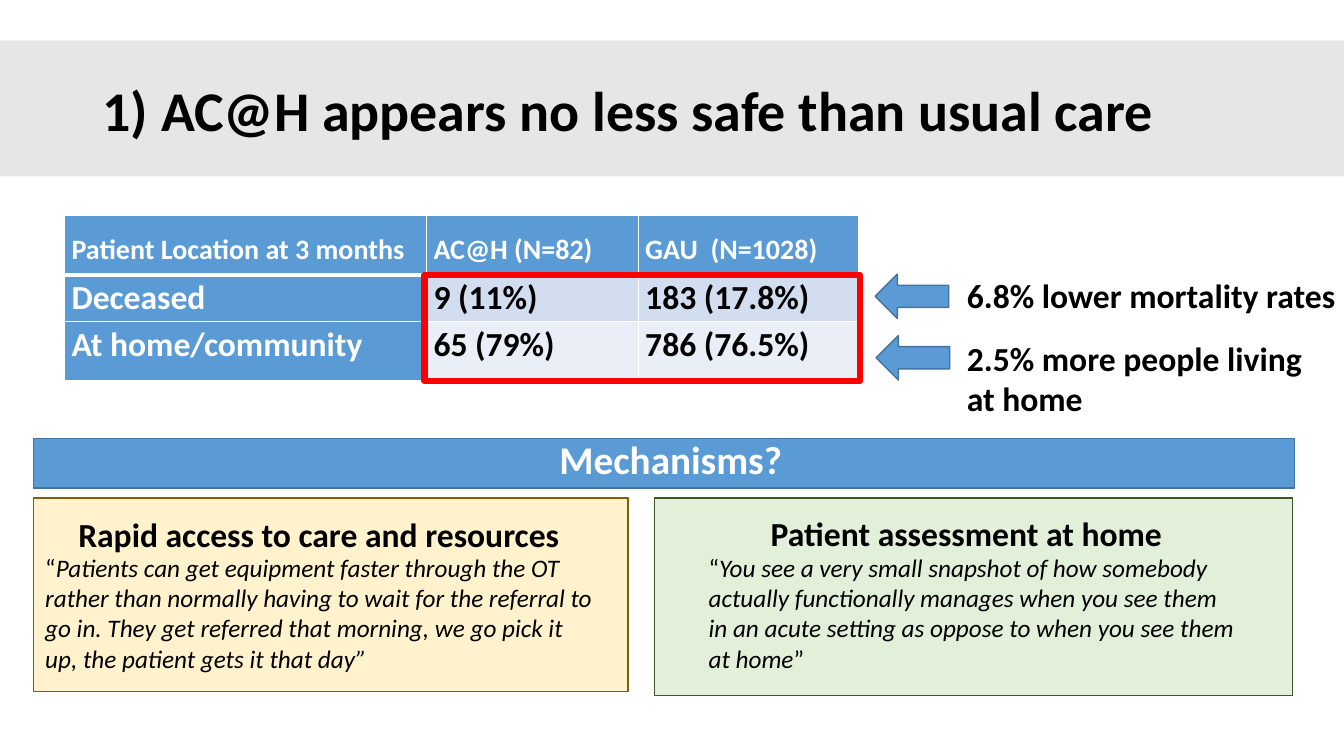
"""Build the slide on the safety of acute care at home compared with usual care."""
from dataclasses import dataclass
from typing import Optional

from lxml import etree
from pptx import Presentation
from pptx.dml.color import RGBColor
from pptx.enum.shapes import MSO_SHAPE
from pptx.enum.text import MSO_ANCHOR, PP_ALIGN
from pptx.oxml.ns import qn
from pptx.util import Inches, Pt

RECTANGLE = MSO_SHAPE.RECTANGLE
LEFT_ARROW = MSO_SHAPE.LEFT_ARROW
LEFT, CENTER, JUSTIFY = PP_ALIGN.LEFT, PP_ALIGN.CENTER, PP_ALIGN.JUSTIFY
TOP, MIDDLE = MSO_ANCHOR.TOP, MSO_ANCHOR.MIDDLE

FONT = "Calibri"
COLORS = {
    "black": "000000", "white": "FFFFFF", "band": "E7E6E6",
    "blue": "5B9BD5", "blue_edge": "43739E", "red": "FF0000",
    "row_dark": "D2DEEF", "row_light": "EAEFF7",
    "yellow": "FFF2CC", "yellow_edge": "806000",
    "green": "E2F0D9", "green_edge": "385723",
}


@dataclass(frozen=True)
class Box:
    left: float
    top: float
    width: float
    height: float

    def lengths(self) -> tuple:
        return tuple(Inches(v) for v in (self.left, self.top, self.width, self.height))


@dataclass(frozen=True)
class Panel:
    box: Box
    fill: Optional[str] = None
    edge: Optional[str] = None
    edge_width: float = 1
    preset: int = RECTANGLE


@dataclass(frozen=True)
class Span:
    text: str
    italic: bool = False


@dataclass(frozen=True)
class Label:
    box: Box
    spans: tuple
    size: float = 24
    bold: bool = True
    color: str = "black"
    align: int = LEFT
    spacing: float = 1
    anchor: int = TOP


BACK_PANELS = (
    Panel(Box(0.33, 4.94, 5.9, 1.92), "yellow", "yellow_edge"),
    Panel(Box(6.49, 4.94, 6.33, 1.96), "green", "green_edge"),
    Panel(Box(0, 0.4, 13.33, 1.35), "band"),
)
FRONT_PANELS = (
    Panel(Box(8.68, 2.72, 0.73, 0.44), "blue", "blue_edge", preset=LEFT_ARROW),
    Panel(Box(8.69, 3.33, 0.73, 0.44), "blue", "blue_edge", preset=LEFT_ARROW),
    Panel(Box(0.33, 4.35, 12.51, 0.49), "blue", "blue_edge"),
    Panel(Box(4.21, 2.73, 4.32, 1.05), edge="red", edge_width=4.5),
)
LABELS = (
    Label(Box(0.92, 0.4, 11.5, 1.45),
          (Span("1) AC@H appears no less safe than usual care"),),
          size=40, spacing=0.9, anchor=MIDDLE),
    Label(Box(0.61, 4.85, 5.18, 0.71),
          (Span("Rapid access to care and resources "),), align=CENTER, spacing=1.5),
    Label(Box(7.35, 4.84, 4.47, 0.71),
          (Span("Patient assessment at home"),), align=CENTER, spacing=1.5),
    Label(Box(9.49, 2.68, 3.92, 0.5), (Span("6.8% lower mortality rates"),)),
    Label(Box(9.49, 3.3, 3.58, 0.91), (Span("2.5% more people living at home"),)),
    Label(Box(5.45, 4.27, 2.91, 0.57), (Span("Mechanisms?"),), size=28, color="white"),
    Label(Box(0.35, 5.43, 5.71, 1.31),
          (Span("“"),
           Span("Patients can get equipment faster through the OT rather than normally "
                "having to wait for the referral to go in. They get referred that "
                "morning, we go pick it up, the patient gets it that day”", True)),
          size=18, bold=False),
    Label(Box(6.93, 5.43, 5.45, 1.31),
          (Span("“"),
           Span("You see a very small snapshot of how somebody actually functionally "
                "manages when you see them in an acute setting as oppose to when you "
                "see them at home", True),
           Span("”")),
          size=18, bold=False),
)

TABLE_BOX = Box(0.64, 2.14, 7.88, 1.64)
COLUMN_WIDTHS = (3.59, 2.1, 2.19)
ROW_HEIGHTS = (0.59, 0.46, 0.59)
ROW_FILLS = ("blue", "row_dark", "row_light")
OUTCOMES = (
    ("Patient Location at 3 months ", "AC@H (N=82)", "GAU  (N=1028)"),
    ("Deceased", "9 (11%)", "183 (17.8%)"),
    ("At home/community", "65 (79%)", "786 (76.5%)"),
)


def rgb(color: str) -> RGBColor:
    return RGBColor.from_string(COLORS[color])


def style_font(font, size: float, bold: bool, color: str, italic: bool = False) -> None:
    font.name = FONT
    font.size = Pt(size)
    font.bold = bold
    font.italic = italic
    font.color.rgb = rgb(color)


def draw_panel(slide, panel: Panel) -> None:
    shape = slide.shapes.add_shape(panel.preset, *panel.box.lengths())
    shape.shadow.inherit = False
    if panel.fill:
        shape.fill.solid()
        shape.fill.fore_color.rgb = rgb(panel.fill)
    else:
        shape.fill.background()
    if panel.edge:
        shape.line.color.rgb = rgb(panel.edge)
        shape.line.width = Pt(panel.edge_width)
    else:
        shape.line.fill.background()


def draw_label(slide, label: Label) -> None:
    frame = slide.shapes.add_textbox(*label.box.lengths()).text_frame
    frame.word_wrap = True
    frame.vertical_anchor = label.anchor
    paragraph = frame.paragraphs[0]
    paragraph.alignment = label.align
    paragraph.line_spacing = label.spacing
    for span in label.spans:
        run = paragraph.add_run()
        run.text = span.text
        style_font(run.font, label.size, label.bold, label.color, span.italic)


def set_borders(cell, widths: dict) -> None:
    properties = cell._tc.get_or_add_tcPr()
    for position, (side, width) in enumerate(widths.items()):
        line = etree.Element(qn(f"a:{side}"), w=str(Pt(width)))
        fill = etree.SubElement(line, qn("a:solidFill"))
        etree.SubElement(fill, qn("a:srgbClr"), val=COLORS["white"])
        properties.insert(position, line)


def draw_outcomes(slide) -> None:
    table = slide.shapes.add_table(
        len(ROW_HEIGHTS), len(COLUMN_WIDTHS), *TABLE_BOX.lengths()).table
    for column, width in zip(table.columns, COLUMN_WIDTHS):
        column.width = Inches(width)
    for r, (height, texts) in enumerate(zip(ROW_HEIGHTS, OUTCOMES)):
        table.rows[r].height = Inches(height)
        header = r == 0
        for c, text in enumerate(texts):
            cell = table.cell(r, c)
            heading = header or c == 0
            cell.margin_left = cell.margin_right = Inches(0.07)
            cell.margin_top = cell.margin_bottom = 0
            cell.fill.solid()
            cell.fill.fore_color.rgb = rgb("blue" if heading else ROW_FILLS[r])
            paragraph = cell.text_frame.paragraphs[0]
            paragraph.text = text
            paragraph.alignment = JUSTIFY
            paragraph.line_spacing = 1.5 if header else 1.07
            style_font(paragraph.runs[0].font, 20 if header else 24, True,
                       "white" if heading else "black")
            set_borders(cell, {"lnL": 1, "lnR": 1, "lnT": 3 if r == 1 else 1,
                               "lnB": 3 if header else 1})


def main() -> None:
    deck = Presentation()
    deck.slide_width, deck.slide_height = Inches(13.33), Inches(7.5)
    slide = deck.slides.add_slide(deck.slide_layouts[6])
    for panel in BACK_PANELS:
        draw_panel(slide, panel)
    draw_outcomes(slide)
    for panel in FRONT_PANELS:
        draw_panel(slide, panel)
    for label in LABELS:
        draw_label(slide, label)
    deck.save("out.pptx")


if __name__ == "__main__":
    main()
